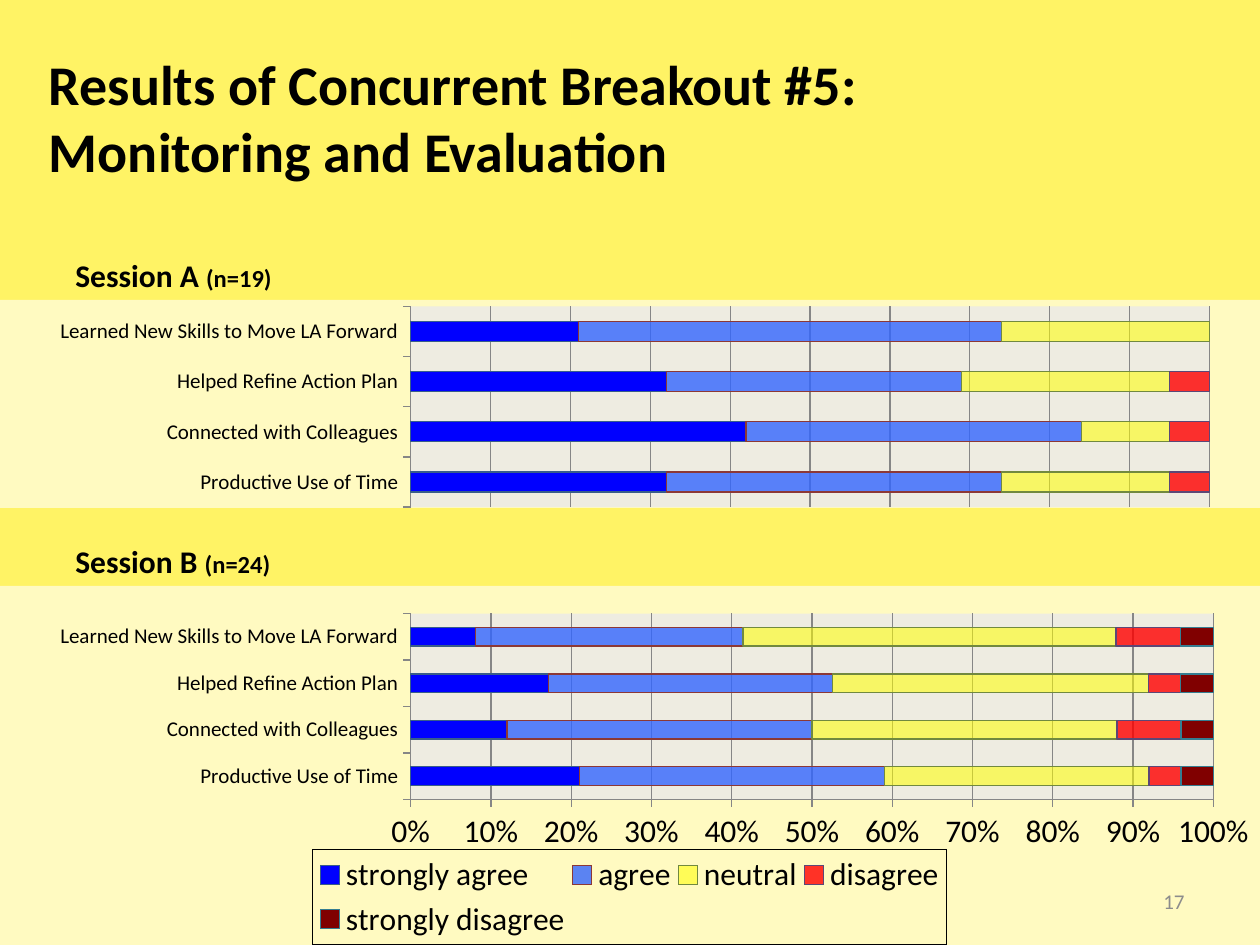
"""Build the breakout results slide with two stacked bar charts."""
from lxml import etree
from pptx import Presentation
from pptx.chart.data import CategoryChartData
from pptx.dml.color import RGBColor
from pptx.enum.chart import XL_CHART_TYPE, XL_LEGEND_POSITION, XL_TICK_LABEL_POSITION, XL_TICK_MARK
from pptx.enum.text import MSO_ANCHOR, PP_ALIGN
from pptx.oxml.ns import qn
from pptx.util import Pt

STACKED = XL_CHART_TYPE.BAR_STACKED_100
BOTTOM = XL_LEGEND_POSITION.BOTTOM
LOW = XL_TICK_LABEL_POSITION.LOW
OUTSIDE, NO_TICK = XL_TICK_MARK.OUTSIDE, XL_TICK_MARK.NONE
TOP, MIDDLE = MSO_ANCHOR.TOP, MSO_ANCHOR.MIDDLE
LEFT, RIGHT = PP_ALIGN.LEFT, PP_ALIGN.RIGHT

FONT = "Calibri"
BLACK = RGBColor(0x00, 0x00, 0x00)
GRAY = RGBColor(0x8C, 0x8C, 0x8C)
GRID = RGBColor(0x86, 0x86, 0x86)
YELLOW = RGBColor(0xFF, 0xF3, 0x65)
CREAM = "FFFAC1"
PLOT = "EEECE1"
BLUE = RGBColor(0x00, 0x00, 0xFF)
LIGHT_BLUE = RGBColor(0x33, 0x66, 0xFF)
BRIGHT_YELLOW = RGBColor(0xFF, 0xFF, 0x00)
RED = RGBColor(0xFF, 0x00, 0x00)
MAROON = RGBColor(0x80, 0x00, 0x00)
OUTLINES = [RGBColor(0x38, 0x5D, 0x8A), RGBColor(0x8C, 0x38, 0x36), RGBColor(0x71, 0x89, 0x3F),
            RGBColor(0x5C, 0x47, 0x76), RGBColor(0x35, 0x7D, 0x91)]
FILLS = [(BLUE, 100), (LIGHT_BLUE, 80), (BRIGHT_YELLOW, 55), (RED, 80), (MAROON, 100)]

CATEGORIES = ["Productive Use of Time", "Connected with Colleagues",
              "Helped Refine Action Plan", "Learned New Skills to Move LA Forward"]
CHARTS = [
    {"place": (0, 334.8, 720, 205.2), "plot": (0.326, 0.077, 0.637, 0.518),
     "legend": (0.248, 0.733, 0.503, 0.267),
     "series": [("strongly agree", (21, 12, 17, 8)), ("agree", (38, 38, 35, 33)),
                ("neutral", (33, 38, 39, 46)), ("disagree", (4, 8, 4, 8)),
                ("strongly disagree", (4, 4, 4, 4))]},
    {"place": (0, 171.4, 720, 118.8), "plot": (0.326, 0.031, 0.634, 0.966),
     "legend": None,
     "series": [("Series 1", (32, 42, 32, 21)), ("Series 2", (42, 42, 37, 53)),
                ("Series 3", (21, 11, 26, 26)), ("Series 4", (5, 5, 5, 0)),
                ("Series 5", (0, 0, 0, 0))]},
]
HEADING = {"bold": True, "size": Pt(18)}
COUNT = {"bold": True, "size": Pt(14)}
TITLE = {"bold": True, "size": Pt(32)}
NUMBER = {"size": Pt(12)}
TEXTS = [
    ((20.9, 21.6, 689, 90), MIDDLE, LEFT, BLACK,
     [("Results of Concurrent Breakout #5:\vMonitoring and Evaluation", TITLE)]),
    ((36, 142.6, 203.8, 28.8), TOP, LEFT, BLACK, [("Session A ", HEADING), ("(n=19)", COUNT)]),
    ((36, 306, 203.8, 28.8), TOP, LEFT, BLACK, [("Session B ", HEADING), ("(n=24)", COUNT)]),
    ((516, 500.4, 168, 28.8), MIDDLE, RIGHT, GRAY, [("17", NUMBER)]),
]


def set_font(font, color=BLACK, **values):
    for name, value in {"name": FONT, **values}.items():
        setattr(font, name, value)
    font.color.rgb = color


def add_text(page, place, anchor, align, color, spans):
    frame = page.shapes.add_textbox(*map(Pt, place)).text_frame
    frame.word_wrap, frame.vertical_anchor = True, anchor
    para = frame.paragraphs[0]
    para.alignment = align
    for text, style in spans:
        for index, line in enumerate(text.split("\v")):
            if index:
                para.add_line_break()
            span = para.add_run()
            span.text = line
            set_font(span.font, color, **style)


def chart_layout(values, inner=False):
    layout = etree.Element(qn("c:layout"))
    manual = etree.SubElement(layout, qn("c:manualLayout"))
    entries = [("layoutTarget", "inner")] if inner else []
    entries += [("xMode", "edge"), ("yMode", "edge"), *zip("xywh", values)]
    for tag, value in entries:
        etree.SubElement(manual, qn("c:" + tag), val=str(value))
    return layout


def place_part(element, index, layout):
    for old in element.findall(qn("c:layout")):
        element.remove(old)
    element.insert(index, layout)


def area_style(fill=None, line=None):
    style = etree.Element(qn("c:spPr"))
    outline = etree.Element(qn("a:ln"))
    for parent, color in ((style, fill), (outline, line)):
        if color:
            solid = etree.SubElement(parent, qn("a:solidFill"))
            etree.SubElement(solid, qn("a:srgbClr"), val=color)
        else:
            etree.SubElement(parent, qn("a:noFill"))
    style.append(outline)
    return style


def style_axes(chart, labelled):
    category, value = chart.category_axis, chart.value_axis
    set_font(category.tick_labels.font, size=Pt(12))
    category.tick_label_position = LOW
    value.minimum_scale, value.maximum_scale, value.major_unit = 0, 1, 0.1
    value.has_major_gridlines = True
    value.tick_labels.number_format = "0%"
    value.tick_labels.number_format_is_linked = False
    value.visible = labelled
    for axis in (category, value):
        axis.major_tick_mark, axis.minor_tick_mark = OUTSIDE, NO_TICK
        axis.format.line.color.rgb = GRID
    value.major_gridlines.format.line.color.rgb = GRID


def style_series(plot):
    plot.gap_width, plot.overlap, plot.vary_by_categories = 150, 100, False
    for series, (color, opacity), outline in zip(plot.series, FILLS, OUTLINES):
        series.invert_if_negative = False
        series.format.fill.solid()
        series.format.fill.fore_color.rgb = color
        if opacity < 100:
            tone = next(series._element.iter(qn("a:srgbClr")))
            etree.SubElement(tone, qn("a:alpha"), val=str(opacity * 1000))
        series.format.line.color.rgb = outline
        series.format.line.width = Pt(0.75)


def add_legend(chart, place):
    chart.has_legend = True
    legend = chart.legend
    legend.position, legend.include_in_layout = BOTTOM, False
    set_font(legend.font, size=Pt(18))
    element = legend._element
    place_part(element, 1, chart_layout(place))
    element.find(qn("c:overlay")).addnext(area_style(line="000000"))


def add_results(page, place, plot, legend, series):
    data = CategoryChartData()
    data.categories = CATEGORIES
    for name, values in series:
        data.add_series(name, values)
    chart = page.shapes.add_chart(STACKED, *map(Pt, place), data).chart
    chart.has_title = chart.has_legend = False
    set_font(chart.font, size=Pt(18))
    style_axes(chart, legend is not None)
    style_series(chart.plots[0])
    space = chart._chartSpace
    space.find(qn("c:txPr")).addprevious(area_style(CREAM))
    area = next(space.iter(qn("c:plotArea")))
    place_part(area, 0, chart_layout(plot, inner=True))
    area.append(area_style(PLOT))
    if legend:
        add_legend(chart, legend)


def main():
    deck = Presentation()
    deck.slide_width, deck.slide_height = Pt(720), Pt(540)
    page = deck.slides.add_slide(deck.slide_layouts[6])
    page.background.fill.solid()
    page.background.fill.fore_color.rgb = YELLOW
    for chart in CHARTS:
        add_results(page, **chart)
    for text in TEXTS:
        add_text(page, *text)
    deck.save("out.pptx")


if __name__ == "__main__":
    main()
